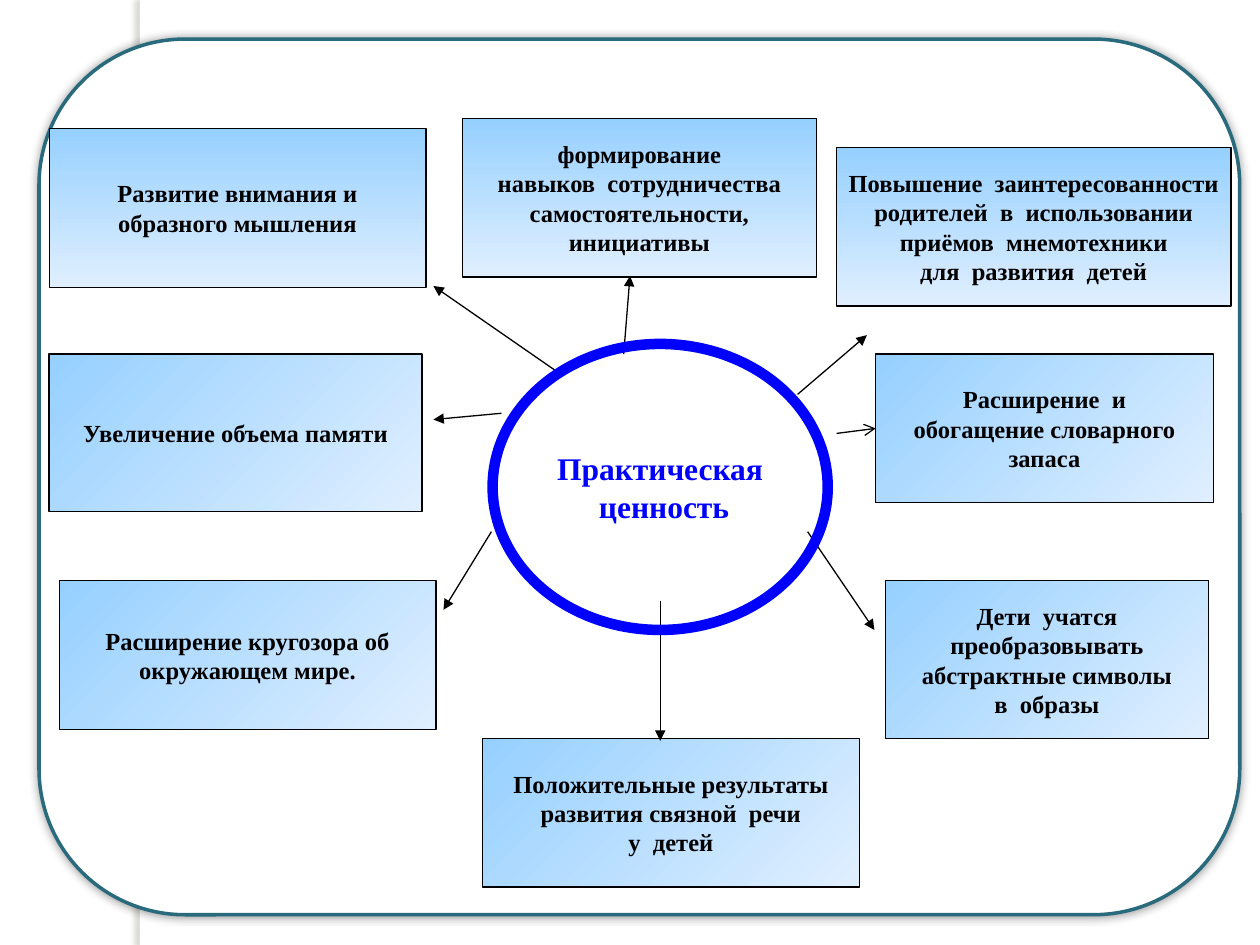
import pptx
import pptx.dml.color
import pptx.enum.shapes
import pptx.enum.text
import pptx.oxml
import pptx.oxml.ns
import pptx.util

Inches = pptx.util.Inches
Pt = pptx.util.Pt
kinds = pptx.enum.shapes.MSO_SHAPE
align = pptx.enum.text.PP_ALIGN
SPACE = pptx.oxml.ns.nsdecls("a")


def color(code):
    return pptx.dml.color.RGBColor.from_string(code)


def add(kind, place, line, width):
    shape = slide.shapes.add_shape(kind, *map(Inches, place))
    shape.shadow.inherit = False
    if line:
        shape.line.color.rgb = color(line)
        shape.line.width = Pt(width)
    else:
        shape.line.fill.background()
    return shape


deck = pptx.Presentation()
deck.slide_width = Inches(10)
deck.slide_height = Inches(7.5)
slide = deck.slides.add_slide(deck.slide_layouts[6])

# Side strip and rounded panel: line, shadow colour, opacity, blur, distance
backs = [
    (kinds.RECTANGLE, (1.11, 0, 0.08, 7.5), None, "736F63", 25, 3, 3),
    (kinds.ROUNDED_RECTANGLE, (0.31, 0.31, 9.53, 6.95), "296B7C",
     "000000", 40, 5, 0),
]
for kind, place, line, tint, alpha, blur, dist in backs:
    back = add(kind, place, line, 2)
    back.fill.solid()
    back.fill.fore_color.rgb = color("FFFFFF")
    effects = back._element.spPr.find(pptx.oxml.ns.qn("a:effectLst"))
    effects.append(pptx.oxml.parse_xml(
        f'<a:outerShdw {SPACE} blurRad="{Pt(blur)}" dist="{Pt(dist)}" '
        f'dir="10800000" algn="ctr" rotWithShape="0"><a:srgbClr val="{tint}">'
        f'<a:alpha val="{alpha * 1000}"/></a:srgbClr></a:outerShdw>'))

# Benefit boxes: place, gradient angle, text
boxes = [
    ((0.39, 1.02, 2.99, 1.26), 90, "Развитие внимания и\nобразного мышления"),
    ((0.39, 2.81, 2.96, 1.25), 45, "Увеличение объема памяти"),
    ((0.47, 4.61, 2.99, 1.18), 45,
     "Расширение кругозора об\nокружающем мире."),
    ((7.03, 4.61, 2.56, 1.25), 45,
     "Дети  учатся\nпреобразовывать\nабстрактные символы\nв  образы"),
    ((6.95, 2.81, 2.68, 1.18), 45,
     "Расширение  и\nобогащение словарного\nзапаса"),
    ((3.83, 5.86, 2.99, 1.18), 45,
     "Положительные результаты\nразвития связной  речи\nу  детей"),
    ((6.64, 1.17, 3.13, 1.26), 90,
     "Повышение  заинтересованности\nродителей  в  использовании\n"
     "приёмов  мнемотехники\nдля  развития  детей"),
    ((3.67, 0.94, 2.81, 1.26), 90,
     "формирование\nнавыков  сотрудничества\vсамостоятельности,\nинициативы"),
]
labels = []
for place, angle, text in boxes:
    box = add(kinds.RECTANGLE, place, "000000", 0.75)
    box.fill.gradient()
    box.fill.gradient_angle = 360 - angle
    for stop, code in zip(box.fill.gradient_stops, ("96D0FF", "E0EFFF")):
        stop.color.rgb = color(code)
    labels.append((box, text, False, 14, "000000"))

# Arrows from the centre to the boxes
arrows = [
    (3.9, 4.22, 3.52, 4.84, "triangle"),
    (6.33, 3.13, 6.88, 2.66, "triangle"),
    (6.41, 4.22, 6.94, 5, "triangle"),
    (3.98, 3.28, 3.44, 3.33, "triangle"),
    (5.24, 4.77, 5.24, 5.88, "triangle"),
    (4.95, 2.81, 5, 2.19, "triangle"),
    (4.45, 2.97, 3.44, 2.27, "triangle"),
    (6.64, 3.44, 6.95, 3.4, "arrow"),
]
for *ends, head in arrows:
    arrow = slide.shapes.add_connector(
        pptx.enum.shapes.MSO_CONNECTOR.STRAIGHT, *map(Inches, ends))
    arrow.line.color.rgb = color("000000")
    arrow.line.width = Pt(0.75)
    arrow.line._get_or_add_ln().append(
        pptx.oxml.parse_xml(f'<a:tailEnd {SPACE} type="{head}"/>'))
    arrow._element.spPr.append(pptx.oxml.parse_xml(f"<a:effectLst {SPACE}/>"))

# Central oval
oval = add(kinds.OVAL, (3.91, 2.73, 2.66, 2.27), "0000FF", 6)
oval.fill.background()
labels.append((oval, "Практическая  ценность", True, 18, "0000FF"))

# Text of the boxes and the oval
for shape, text, wrap, size, code in labels:
    frame = shape.text_frame
    frame.text = text
    frame.word_wrap = wrap
    frame.vertical_anchor = pptx.enum.text.MSO_ANCHOR.MIDDLE
    style = {"name": "Times New Roman", "size": Pt(size), "bold": True}
    for para in frame.paragraphs:
        para.alignment = align.CENTER
        for run in para.runs:
            for key, value in style.items():
                setattr(run.font, key, value)
            run.font.color.rgb = color(code)

deck.save("out.pptx")
